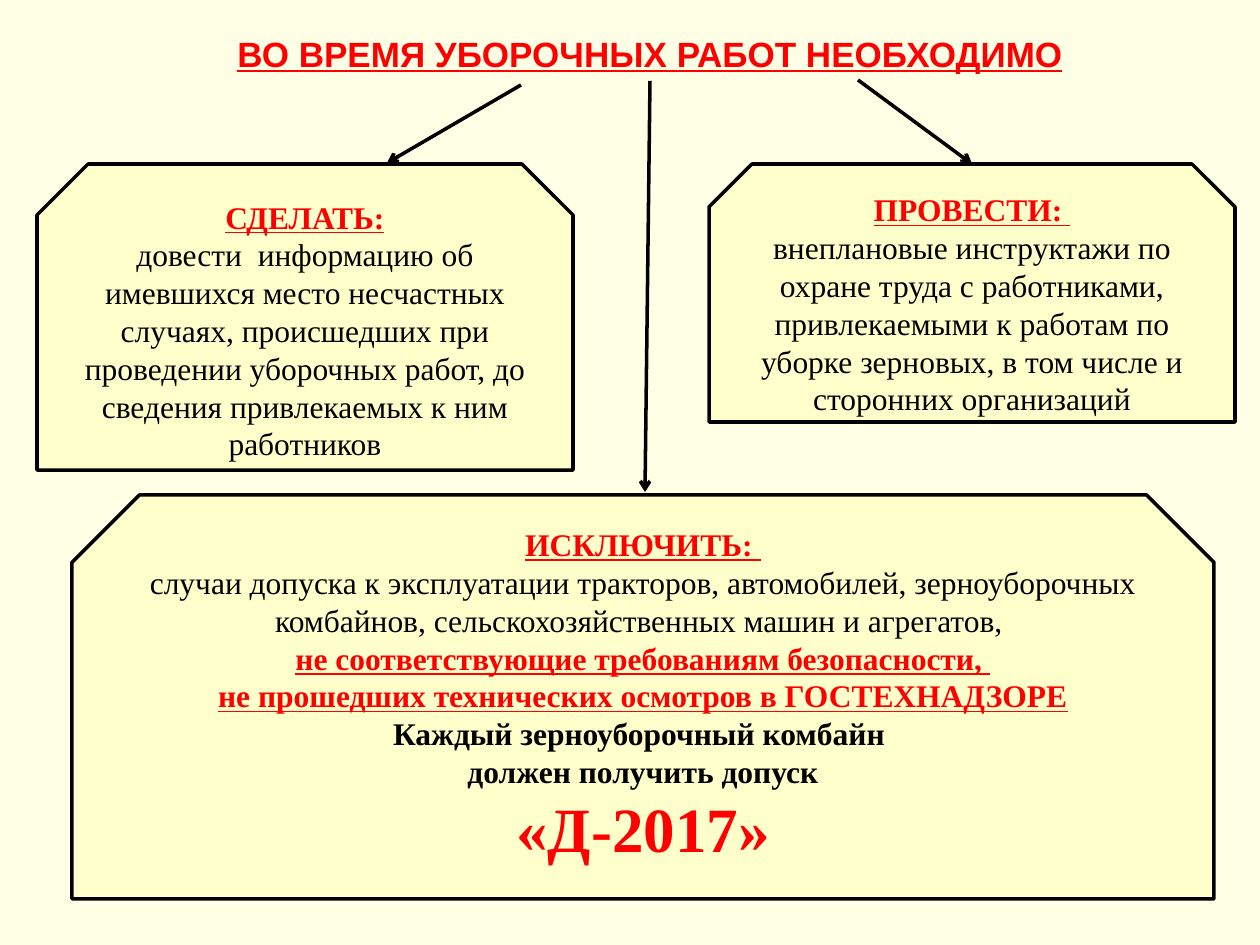
from pptx import Presentation
from pptx import util as u
from pptx.dml.color import RGBColor
from pptx.enum import shapes, text
from pptx.oxml.ns import qn
from lxml import etree

SCALE = 914400 / 126  # EMU per px
COLORS = {"background": "FFFFE5", "box": "FFFFCC", "line": "000000",
          "text": "000000", "accent": "FF0000"}


def px(value):
    return u.Emu(round(value * SCALE))


def rgb(name):
    return RGBColor.from_string(COLORS[name])


def write(paragraph, content, font="Times New Roman", size=18, color="text",
          bold=False, underline=False):
    """Add formatted text to a centred paragraph; newlines become line breaks."""
    paragraph.alignment = text.PP_ALIGN.CENTER
    for index, line in enumerate(content.split("\n")):
        if index:
            paragraph.add_line_break()
        if not line:
            continue
        run = paragraph.add_run()
        run.text = line
        run.font.name = font
        run.font.size = u.Pt(size)
        run.font.bold = bold
        run.font.underline = underline
        run.font.color.rgb = rgb(color)


class SlideBuilder:
    line_width = u.Pt(2)

    def __init__(self, presentation):
        self.slide = presentation.slides.add_slide(presentation.slide_layouts[5])
        fill = self.slide.background.fill
        fill.solid()
        fill.fore_color.rgb = rgb("background")

    def title(self, content, left, top, width, height):
        shape = self.slide.shapes.title
        shape.left, shape.top = px(left), px(top)
        shape.width, shape.height = px(width), px(height)
        frame = shape.text_frame
        frame.word_wrap = True
        frame.auto_size = text.MSO_AUTO_SIZE.NONE
        frame.vertical_anchor = text.MSO_ANCHOR.MIDDLE
        write(frame.paragraphs[0], content, font="Arial", size=20, **HEADING)

    def box(self, paragraphs, left, top, width, height, bottom_inset=6):
        """Draw a snipped box; each paragraph is a list of (text, format)."""
        shape = self.slide.shapes.add_shape(
            shapes.MSO_SHAPE.SNIP_2_SAME_RECTANGLE,
            px(left), px(top), px(width), px(height))
        shape.shadow.inherit = False
        shape.fill.solid()
        shape.fill.fore_color.rgb = rgb("box")
        shape.line.color.rgb = rgb("line")
        shape.line.width = self.line_width
        frame = shape.text_frame
        frame.word_wrap = True
        frame.vertical_anchor = text.MSO_ANCHOR.MIDDLE
        frame.margin_bottom = px(bottom_inset)
        for index, runs in enumerate(paragraphs):
            paragraph = frame.add_paragraph() if index else frame.paragraphs[0]
            for content, style in runs:
                write(paragraph, content, **style)

    def arrow(self, x1, y1, x2, y2):
        connector = self.slide.shapes.add_connector(
            shapes.MSO_CONNECTOR.STRAIGHT, px(x1), px(y1), px(x2), px(y2))
        connector.line.color.rgb = rgb("line")
        connector.line.width = self.line_width
        line = connector.line._get_or_add_ln()
        etree.SubElement(line, qn("a:tailEnd"), type="arrow")
        etree.SubElement(connector._element.spPr, qn("a:effectLst"))


HEADING = {"color": "accent", "bold": True, "underline": True}
PLAIN = {}
BOLD = {"bold": True}
PERMIT = {"color": "accent", "bold": True, "size": 36}


def main():
    presentation = Presentation()
    presentation.slide_width, presentation.slide_height = u.Inches(10), u.Inches(7.5)
    builder = SlideBuilder(presentation)

    # Title
    builder.title("ВО ВРЕМЯ УБОРОЧНЫХ РАБОТ НЕОБХОДИМО", 144, 26, 1012, 55)

    # Upper boxes
    builder.box([
        [("СДЕЛАТЬ:", HEADING)],
        [("довести  информацию об имевшихся место несчастных случаях, "
          "происшедших при проведении уборочных работ, до сведения "
          "привлекаемых к ним работников", PLAIN)],
    ], 37, 164, 536, 306)
    builder.box([
        [("ПРОВЕСТИ: ", HEADING)],
        [("внеплановые инструктажи по охране труда с работниками, "
          "привлекаемыми к работам по уборке зерновых, в том числе и "
          "сторонних организаций", PLAIN)],
    ], 709, 164, 526, 258)

    # Lower box
    builder.box([
        [("ИСКЛЮЧИТЬ: \n", HEADING),
         ("случаи допуска к эксплуатации тракторов, автомобилей, "
          "зерноуборочных комбайнов, сельскохозяйственных машин и "
          "агрегатов, \n", PLAIN),
         ("не соответствующие требованиям безопасности, \n"
          "не прошедших технических осмотров в ГОСТЕХНАДЗОРЕ", HEADING)],
        [("Каждый зерноуборочный комбайн ", BOLD)],
        [("должен получить допуск", BOLD)],
        [("«Д-2017»", PERMIT)],
    ], 72, 495, 1142, 404, bottom_inset=43)

    # Arrows from the title to the boxes
    for ends in ((521, 85, 387, 163), (858, 80, 972, 164), (650, 81, 645, 492)):
        builder.arrow(*ends)

    presentation.save("out.pptx")


if __name__ == "__main__":
    main()
